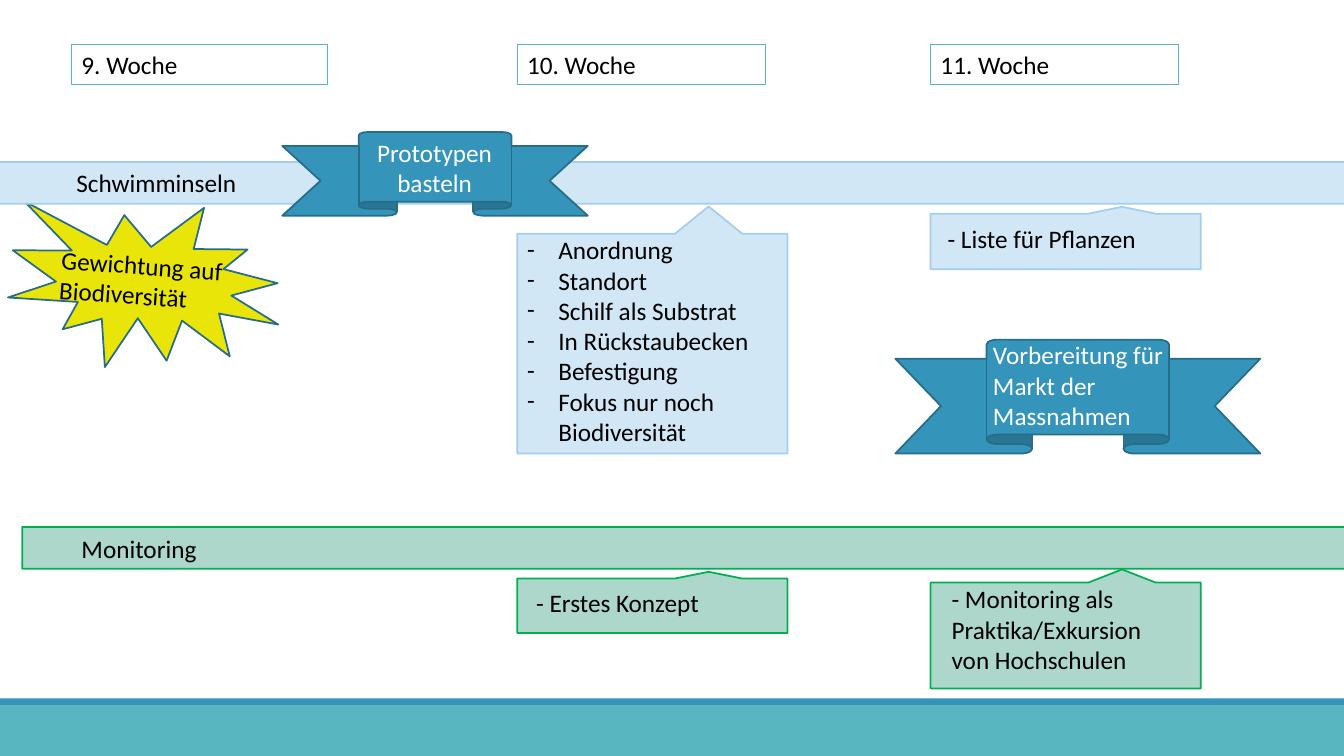
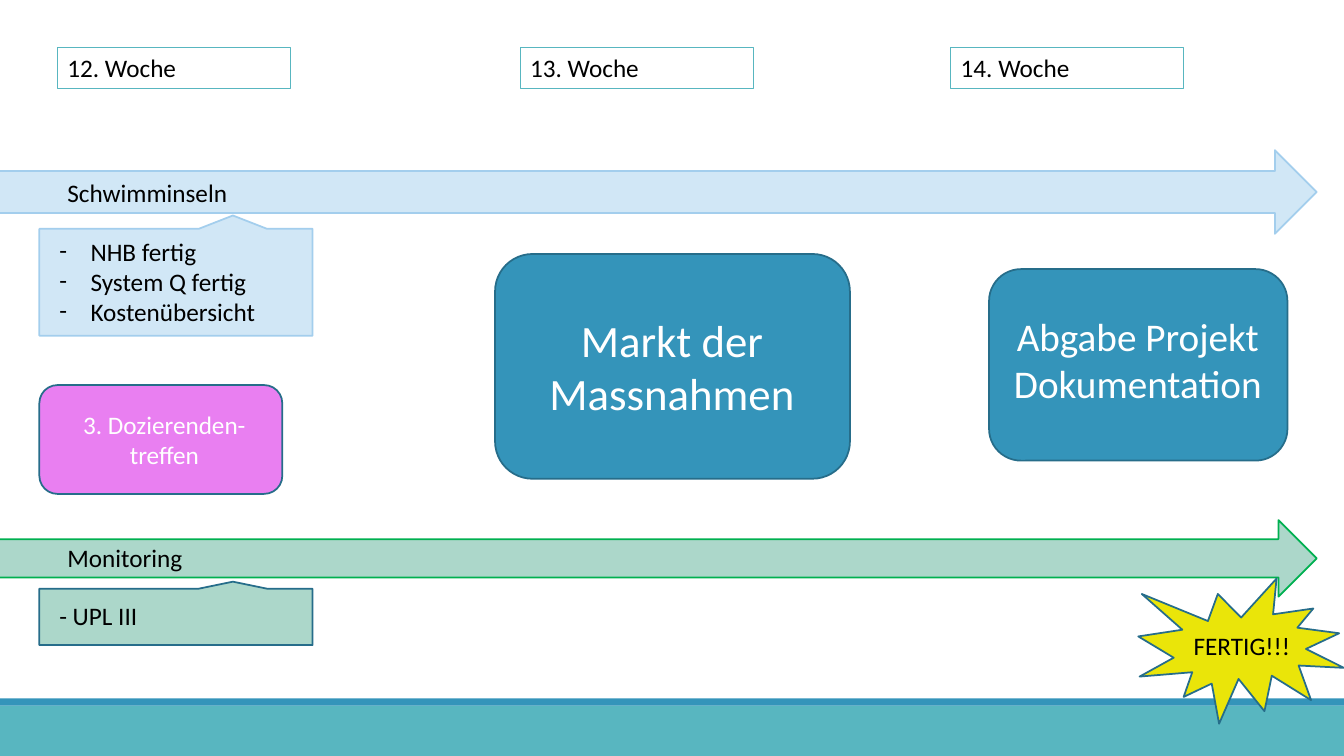
"""Build two slides of a project timeline covering weeks 9 to 14."""
from lxml.etree import SubElement
from pptx import Presentation
from pptx.dml.color import RGBColor
from pptx.enum.shapes import MSO_SHAPE as SHAPE
from pptx.enum.text import MSO_ANCHOR as ANCHOR, PP_ALIGN as ALIGN
from pptx.oxml.ns import qn
from pptx.util import Inches, Pt

FONT = "Calibri"
BLACK, WHITE = "000000", "FFFFFF"
TEAL, BLUE, DARK_BLUE = "58B6C0", "3494BA", "266D8A"
PALE_BLUE, SKY = "D1E7F6", "A3CEED"
PALE_GREEN, GREEN = "ACD7CA", "00B050"
YELLOW, PINK = "EAE509", "E97FF1"
INDENT = Inches(0.31)

BANDS = [((0, 7, 13.33, 0.5), TEAL), ((0, 6.93, 13.33, 0.07), BLUE)]
ARROW, CALLOUT = SHAPE.RIGHT_ARROW, SHAPE.RECTANGULAR_CALLOUT
RIBBON, SEAL, CARD = SHAPE.UP_RIBBON, SHAPE.EXPLOSION1, SHAPE.ROUNDED_RECTANGLE


def draw(slide, preset, box, fill, line=None, rotation=0):
    shape = slide.shapes.add_shape(preset, *map(Inches, box))
    shape.shadow.inherit = False
    shape.rotation = rotation
    shape.fill.solid()
    shape.fill.fore_color.rgb = RGBColor.from_string(fill)
    if line:
        shape.line.color.rgb = RGBColor.from_string(line)
        shape.line.width = Pt(1.25)
    else:
        shape.line.fill.background()


def write(slide, box, text, color=BLACK, size=18, align=ALIGN.LEFT, rotation=0, bullets=False):
    label = slide.shapes.add_textbox(*map(Inches, box))
    label.rotation = rotation
    text_frame = label.text_frame
    text_frame.word_wrap = True
    text_frame.vertical_anchor = ANCHOR.TOP
    text_frame.text = text
    for paragraph in text_frame.paragraphs:
        paragraph.alignment = align
        font = paragraph.runs[0].font
        font.name, font.size = FONT, Pt(size)
        font.color.rgb = RGBColor.from_string(color)
        if bullets:
            properties = paragraph._p.get_or_add_pPr()
            properties.set("marL", str(INDENT))
            properties.set("indent", str(-INDENT))
            SubElement(properties, qn("a:buFont"), typeface=FONT)
            SubElement(properties, qn("a:buChar"), char="-")
    return label


SLIDES = [
    {
        "weeks": [("9. Woche", (0.71, 0.44, 2.54, 0.4)),
                  ("10. Woche", (5.13, 0.44, 2.46, 0.4)),
                  ("11. Woche", (9.23, 0.44, 2.46, 0.4))],
        "shapes": [
            (SEAL, (0.09, 1.99, 2.71, 1.7), YELLOW, DARK_BLUE, 7.9),
            (ARROW, (-0.09, 1.4, 13.98, 0.83), PALE_BLUE, SKY),
            (ARROW, (0.22, 5.02, 13.67, 0.83), PALE_GREEN, GREEN),
            (RIBBON, (2.8, 1.31, 3.03, 0.83), BLUE, DARK_BLUE),
            (CALLOUT, (5.13, 2.32, 2.68, 2.18), PALE_BLUE, SKY, 180),
            (CALLOUT, (5.13, 5.74, 2.68, 0.54), PALE_GREEN, GREEN, 180),
            (CALLOUT, (9.23, 2.12, 2.68, 0.55), PALE_BLUE, SKY, 180),
            (CALLOUT, (9.23, 5.78, 2.68, 1.05), PALE_GREEN, GREEN, 180),
            (RIBBON, (8.88, 3.37, 3.62, 1.13), BLUE, DARK_BLUE),
        ],
        "texts": [
            ((0.66, 1.61, 2.12, 0.4), "Schwimminseln", {}),
            ((0.71, 5.24, 2.09, 0.4), "Monitoring", {}),
            ((0.5, 2.43, 1.88, 0.7), "Gewichtung auf Biodiversität", {"rotation": 4.1}),
            ((3.57, 1.31, 1.48, 0.71), "Prototypen basteln",
             {"color": WHITE, "align": ALIGN.CENTER}),
            ((5.13, 2.28, 2.68, 2.22),
             "Anordnung\nStandort\nSchilf als Substrat\nIn Rückstaubecken\n"
             "Befestigung\nFokus nur noch Biodiversität", {"bullets": True}),
            ((5.22, 5.78, 2.44, 0.4), "- Erstes Konzept", {}),
            ((9.3, 2.17, 2.54, 0.4), "- Liste für Pflanzen", {}),
            ((9.34, 5.74, 2.46, 1.01), "- Monitoring als Praktika/Exkursion von Hochschulen", {}),
            ((9.75, 3.32, 2.51, 1.01), "Vorbereitung für Markt der Massnahmen", {"color": WHITE}),
        ],
    },
    {
        "weeks": [("12. Woche", (0.57, 0.47, 2.31, 0.41)),
                  ("13. Woche", (5.16, 0.47, 2.31, 0.41)),
                  ("14. Woche", (9.43, 0.47, 2.31, 0.41))],
        "shapes": [
            (ARROW, (-0.14, 1.49, 13.2, 0.83), PALE_BLUE, SKY),
            (ARROW, (-0.14, 5.16, 13.2, 0.76), PALE_GREEN, GREEN),
            (CARD, (0.39, 3.82, 2.41, 1.08), PINK, DARK_BLUE),
            (CALLOUT, (0.39, 5.84, 2.71, 0.56), PALE_GREEN, DARK_BLUE, 180),
            (CALLOUT, (0.39, 2.27, 2.71, 1.06), PALE_BLUE, SKY, 180),
            (CARD, (4.91, 2.52, 3.52, 2.23), BLUE, DARK_BLUE),
            (CARD, (9.81, 2.67, 2.96, 1.9), BLUE, DARK_BLUE),
            (SEAL, (11.29, 5.74, 2.04, 1.44), YELLOW, DARK_BLUE),
        ],
        "texts": [
            ((0.57, 1.71, 2.06, 0.4), "Schwimminseln", {}),
            ((0.57, 5.33, 2.2, 0.4), "Monitoring", {}),
            ((0.57, 4.01, 2.12, 0.71), "3. Dozierenden-treffen",
             {"color": WHITE, "align": ALIGN.CENTER}),
            ((0.49, 5.91, 2.28, 0.4), "- UPL III", {}),
            ((0.49, 2.29, 2.53, 1.01), "NHB fertig\nSystem Q fertig\nKostenübersicht",
             {"bullets": True}),
            ((5.26, 3.05, 2.81, 1.18), "Markt der Massnahmen",
             {"color": WHITE, "size": 32, "align": ALIGN.CENTER}),
            ((9.92, 3.05, 2.73, 1.04), "Abgabe Projekt Dokumentation",
             {"color": WHITE, "size": 28, "align": ALIGN.CENTER}),
            ((11.74, 6.2, 1.2, 0.4), "FERTIG!!!", {}),
        ],
    },
]

presentation = Presentation()
presentation.slide_width, presentation.slide_height = Inches(13.33), Inches(7.5)

for content in SLIDES:
    slide = presentation.slides.add_slide(presentation.slide_layouts[6])
    for box, fill in BANDS:
        draw(slide, SHAPE.RECTANGLE, box, fill)
    for week, box in content["weeks"]:
        label = write(slide, box, week)
        label.line.color.rgb = RGBColor.from_string(TEAL)
        label.line.width = Pt(0.75)
    for arguments in content["shapes"]:
        draw(slide, *arguments)
    for box, text, style in content["texts"]:
        write(slide, box, text, **style)

presentation.save("out.pptx")
